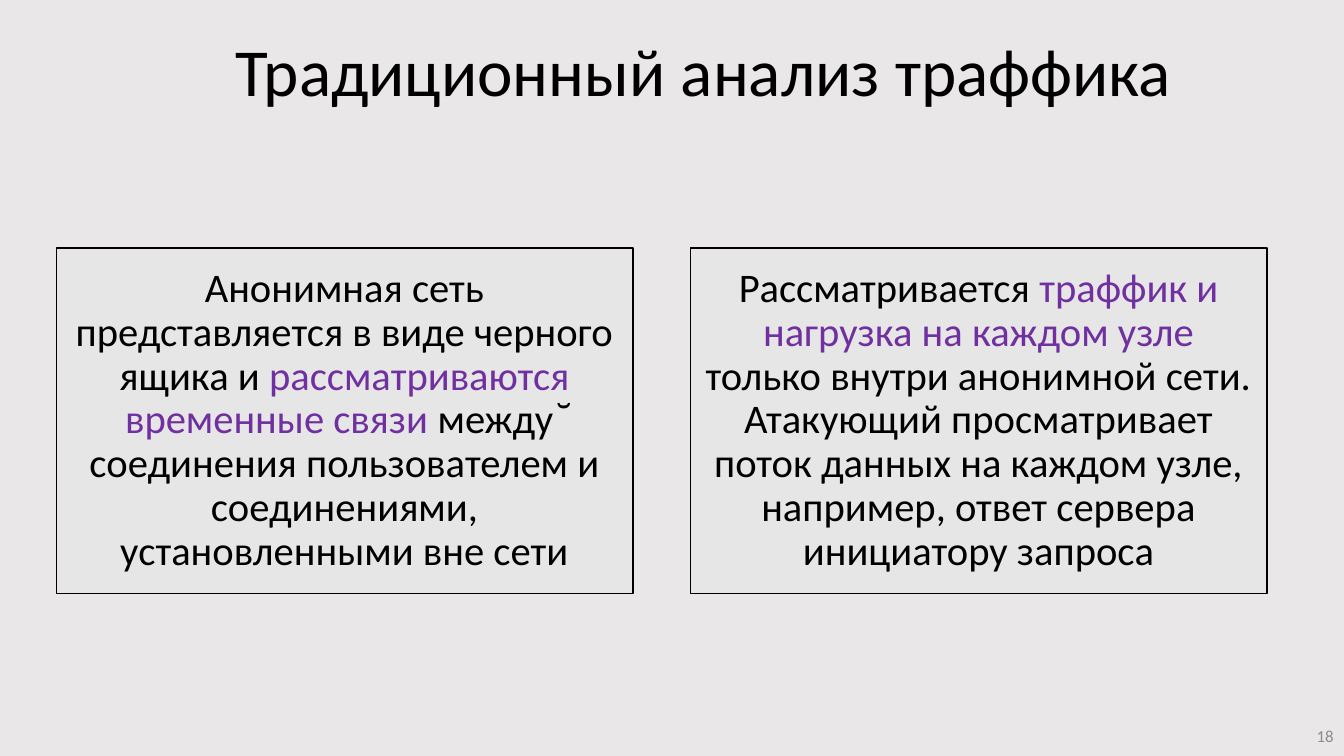
from pptx import Presentation
from pptx.dml.color import RGBColor
from pptx.enum.shapes import MSO_SHAPE
from pptx.enum.text import MSO_ANCHOR, PP_ALIGN
from pptx.util import Cm, Pt

COLORS = {
    "back": "E9E7E7",
    "card": "E7E6E6",
    "ink": "000000",
    "mark": "7030A0",
    "page": "8C8C8C",
}
FONT = "Calibri"
LEFT, STEP = 1.42, 15.98
CARDS = [
    [
        ("Анонимная сеть представляется в виде черного ящика и ", "ink"),
        ("рассматриваются временные связи ", "mark"),
        ("между ̆ соединения пользователем и соединениями, установленными вне сети", "ink"),
    ],
    [
        ("Рассматривается ", "ink"),
        ("траффик и нагрузка на каждом узле ", "mark"),
        ("только внутри анонимной сети. Атакующий просматривает поток данных "
         "на каждом узле, например, ответ сервера инициатору запроса", "ink"),
    ],
]


def color(name):
    return RGBColor.from_string(COLORS[name])


def write(shape, runs, size, align, inset=None):
    frame = shape.text_frame
    frame.word_wrap = True
    frame.vertical_anchor = MSO_ANCHOR.MIDDLE
    if inset is not None:
        frame.margin_left = frame.margin_right = Cm(inset)
        frame.margin_top = frame.margin_bottom = Cm(inset)
    para = frame.paragraphs[0]
    para.alignment = align
    for text, tint in runs:
        run = para.add_run()
        run.text = text
        run.font.name = FONT
        run.font.size = Pt(size)
        run.font.color.rgb = color(tint)
    return para


def add_title(slide, text):
    title = slide.shapes.title
    title.left, title.top = Cm(5.69), Cm(0.61)
    title.width, title.height = Cm(26.9), Cm(2.31)
    para = write(title, [(text, "ink")], 48, PP_ALIGN.LEFT)
    para.line_spacing = 1.0


def add_card(slide, left, runs):
    card = slide.shapes.add_shape(
        MSO_SHAPE.RECTANGLE, Cm(left), Cm(6.25), Cm(14.53), Cm(8.71))
    card.shadow.inherit = False
    card.fill.solid()
    card.fill.fore_color.rgb = color("card")
    card.line.color.rgb = color("ink")
    card.line.width = Pt(1)
    para = write(card, runs, 29, PP_ALIGN.CENTER, 0.3)
    para.line_spacing = 0.9


def add_page(slide, text):
    box = slide.shapes.add_textbox(Cm(26.24), Cm(18.03), Cm(7.62), Cm(1.02))
    write(box, [(text, "page")], 12, PP_ALIGN.RIGHT)


def main():
    deck = Presentation()
    deck.slide_width, deck.slide_height = Cm(33.87), Cm(19.05)
    slide = deck.slides.add_slide(deck.slide_layouts[5])
    slide.background.fill.solid()
    slide.background.fill.fore_color.rgb = color("back")
    add_title(slide, "Традиционный анализ траффика")
    for i, runs in enumerate(CARDS):
        add_card(slide, LEFT + i * STEP, runs)
    add_page(slide, "18")
    deck.save("out.pptx")


if __name__ == "__main__":
    main()
